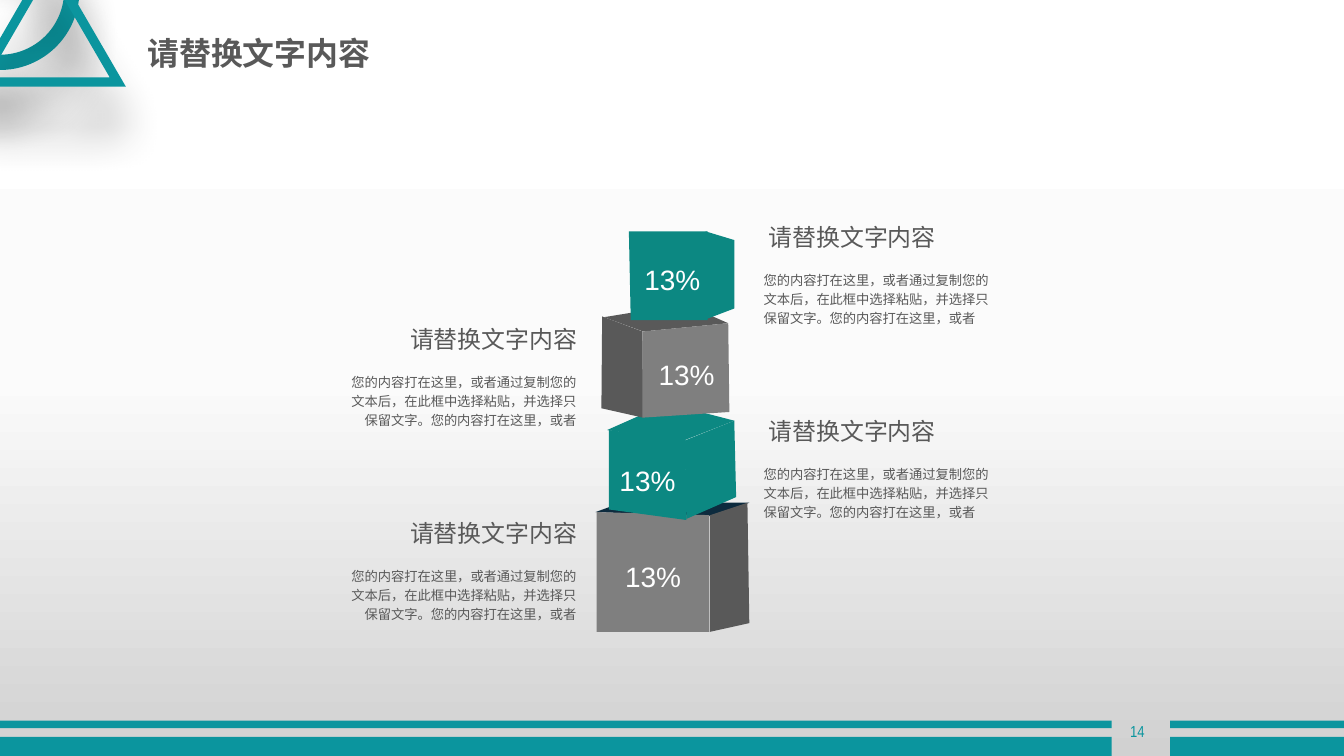
from copy import deepcopy

from lxml import etree
from pptx import Presentation
from pptx import util as u
from pptx.dml.color import RGBColor
from pptx.enum import shapes, text
from pptx.oxml import ns

TEAL, BLOCK_TEAL, GREY, DARK = "0B959E", "0C8882", "7F7F7F", "595959"
NAVY, WHITE = "0D2B3E", "FFFFFF"
HEADING = "请替换文字内容"
BODY = "您的内容打在这里，或者通过复制您的文本后，在此框中选择粘贴，并选择只保留文字。您的内容打在这里，或者"
LEFT, RIGHT = text.PP_ALIGN.LEFT, text.PP_ALIGN.RIGHT
SHAPE = shapes.MSO_SHAPE

BLOCK_FACES = [
    (NAVY, [(15.82, 13.61), (16.51, 13.36), (19.91, 13.36), (18.95, 13.72)]),
    (DARK, [(18.87, 13.69), (18.87, 16.79), (19.91, 16.56), (19.86, 13.36)]),
    (GREY, [(15.85, 13.61), (15.85, 16.79), (18.85, 16.79), (18.85, 13.69)]),
    (BLOCK_TEAL, [(16.13, 11.43), (17.73, 10.72), (19.51, 11.18), (18.16, 11.71)]),
    (BLOCK_TEAL, [(18.19, 11.71), (19.51, 11.18), (19.56, 13.21), (18.24, 13.79)]),
    (DARK, [(16.05, 8.43), (18.19, 8.08), (19.35, 8.59), (17.09, 8.81)]),
    (DARK, [(16, 8.41), (17.07, 8.81), (17.09, 11.1), (15.98, 10.85)]),
    (GREY, [(19.35, 8.59), (17.07, 8.81), (17.07, 11.1), (19.38, 10.95)]),
    (BLOCK_TEAL, [(16.71, 6.15), (18.8, 6.15), (18.8, 8.51), (16.76, 8.51)]),
    (BLOCK_TEAL, [(18.75, 6.15), (19.51, 6.38), (19.51, 8.2), (18.77, 8.48)]),
    (BLOCK_TEAL, [(16.18, 11.43), (16.18, 13.54), (18.24, 13.82), (18.21, 11.68)]),
]
PERCENT_SPOTS = [(17.12, 6.83), (17.5, 9.35), (16.46, 12.17), (16.61, 14.73)]
ENTRIES = [(LEFT, 5.77), (RIGHT, 8.48), (LEFT, 10.92), (RIGHT, 13.64)]


def colour(hex_code):
    return RGBColor.from_string(hex_code)


class Page:
    """Hold the text style and the current slide, and add elements to it."""

    def __init__(self, slide, font="Arial", east_font="Noto Sans CJK SC"):
        self.slide = slide
        self.font = font
        self.east_font = east_font

    def background(self, stops):
        fill = self.slide.background.fill
        fill.gradient()
        fill.gradient_angle = 270
        stop_list = self.slide.element.find(".//" + ns.qn("a:gsLst"))
        while len(stop_list) < len(stops):
            stop_list.append(deepcopy(stop_list[-1]))
        for stop, (position, hex_code) in zip(fill.gradient_stops, stops):
            stop.position = position
            stop.color.rgb = colour(hex_code)

    def paint(self, shape, hex_code):
        shape.shadow.inherit = False
        shape.fill.solid()
        shape.fill.fore_color.rgb = colour(hex_code)
        shape.line.fill.background()
        return shape

    def preset(self, kind, left, top, width, height, hex_code=TEAL):
        shape = self.slide.shapes.add_shape(
            kind, u.Cm(left), u.Cm(top), u.Cm(width), u.Cm(height))
        return self.paint(shape, hex_code)

    def outline(self, shape, hex_code, points):
        shape.fill.background()
        shape.line.color.rgb = colour(hex_code)
        shape.line.width = u.Pt(points)
        line = shape.element.spPr.find(ns.qn("a:ln"))
        etree.SubElement(line, ns.qn("a:miter"), lim="800000")

    def drop_shadow(self, shape):
        effects = shape.element.spPr.find(ns.qn("a:effectLst"))
        shadow = etree.SubElement(
            effects, ns.qn("a:outerShdw"), blurRad=str(u.Pt(33)), dist=str(u.Pt(33)),
            dir="5400000", algn="t", rotWithShape="0")
        tint = etree.SubElement(shadow, ns.qn("a:srgbClr"), val="000000")
        etree.SubElement(tint, ns.qn("a:alpha"), val="43000")

    def face(self, group, hex_code, corners):
        points = [(u.Cm(x), u.Cm(y)) for x, y in corners]
        builder = group.shapes.build_freeform(*points[0])
        builder.add_line_segments(points[1:], close=True)
        self.paint(builder.convert_to_shape(), hex_code)

    def set_words(self, box, words, size, hex_code, align=LEFT, font=None, bold=False):
        box.text_frame.text = words
        para = box.text_frame.paragraphs[0]
        para.alignment = align
        span = para.runs[0]
        span.font.size = u.Pt(size)
        span.font.bold = bold
        span.font.color.rgb = colour(hex_code)
        span.font.name = font or self.font
        properties = para._p.find(".//" + ns.qn("a:rPr"))
        etree.SubElement(properties, ns.qn("a:ea"), typeface=self.east_font)
        return para

    def label(self, parent, words, left, top, width, height, size, hex_code,
              align=LEFT, wrap=True, anchor=text.MSO_ANCHOR.TOP):
        box = parent.shapes.add_textbox(
            u.Cm(left), u.Cm(top), u.Cm(width), u.Cm(height))
        frame = box.text_frame
        frame.margin_left = frame.margin_right = frame.margin_top = frame.margin_bottom = 0
        frame.word_wrap = wrap
        frame.auto_size = text.MSO_AUTO_SIZE.SHAPE_TO_FIT_TEXT
        frame.vertical_anchor = anchor
        self.set_words(box, words, size, hex_code, align).line_spacing = 1.2

    def title(self, words):
        box = self.slide.shapes.title
        box.left, box.top, box.width, box.height = (
            u.Cm(3.66), u.Cm(0.89), u.Cm(9.8), u.Cm(1.14))
        box.text_frame.vertical_anchor = text.MSO_ANCHOR.MIDDLE
        box.text_frame.auto_size = text.MSO_AUTO_SIZE.NONE
        para = self.set_words(box, words, 24, DARK, font=self.east_font, bold=True)
        para.line_spacing = 0.9

    def page_number(self, number):
        box = self.slide.shapes.add_textbox(
            u.Cm(29.57), u.Cm(18.82), u.Cm(1.3), u.Cm(1.22))
        box.text_frame.word_wrap = True
        box.text_frame.vertical_anchor = text.MSO_ANCHOR.MIDDLE
        self.set_words(box, number, 12, TEAL, text.PP_ALIGN.CENTER, "Arial Narrow")

    def entry(self, align, top):
        heading_left, body_left = (20.42, 20.29) if align == LEFT else (10.16, 9.19)
        self.label(self.slide, BODY, body_left, top + 1.38, 6.12, 1.55, 10, DARK, align)
        self.label(self.slide, HEADING, heading_left, top, 5.18, 0.91, 18, DARK, align)


def main():
    deck = Presentation()
    deck.slide_width, deck.slide_height = u.Cm(35.71), u.Cm(20.09)
    page = Page(deck.slides.add_slide(deck.slide_layouts[5]))
    page.background([(0, "FFFFFF"), (0.5, "FBFBFB"), (1, "D1D1D1")])

    ring = page.preset(SHAPE.DONUT, -2.11, -2.36, 4.22, 4.22)
    ring.adjustments[0] = 0.096
    triangle = page.preset(SHAPE.ISOSCELES_TRIANGLE, -0.53, -0.97, 3.66, 3.15)
    page.outline(triangle, TEAL, 7)
    for ornament in (ring, triangle):
        page.drop_shadow(ornament)

    for left, width in ((0, 29.54), (31.09, 4.62)):
        for top, height in ((19.58, 0.51), (19.15, 0.2)):
            page.preset(SHAPE.RECTANGLE, left, top, width, height)
    page.page_number("14")

    tower = page.slide.shapes.add_group_shape()
    for hex_code, corners in BLOCK_FACES:
        page.face(tower, hex_code, corners)
    for left, top in PERCENT_SPOTS:
        page.label(tower, "13%", left, top, 1.5, 0.99, 21.1, WHITE,
                   wrap=False, anchor=text.MSO_ANCHOR.MIDDLE)

    for align, top in ENTRIES:
        page.entry(align, top)
    page.title(HEADING)
    deck.save("out.pptx")


if __name__ == "__main__":
    main()
